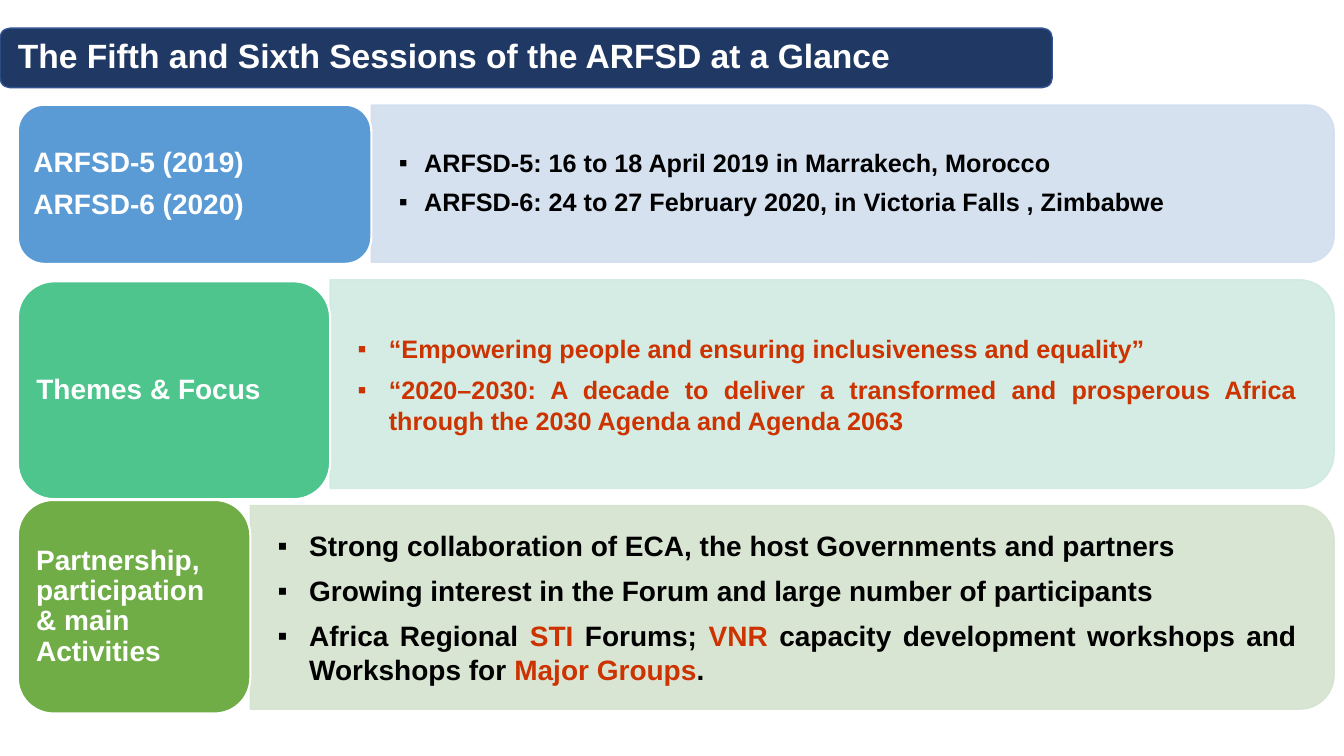
from dataclasses import dataclass

from lxml import etree
from pptx import Presentation
from pptx.dml import color
from pptx.enum import shapes, text
from pptx.oxml import ns
from pptx.util import Cm, Pt

COLORS = {
    "navy": "203864", "navy_line": "325491", "white": "FFFFFF",
    "black": "000000", "red": "CC3300",
    "blue": "5B9BD5", "pale_blue": "D2DEEF",
    "teal": "4DC58D", "pale_teal": "D0EAE1",
    "green": "70AD47", "pale_green": "D5E3CF",
}
LABEL_LEFT, PANEL_RIGHT = 0.45, 33.62
CORNER = 0.0488  # text inset per unit of height beside a rounded corner

TITLE_FRAME = dict(margin_left=Cm(0.38), margin_right=Cm(0.2), margin_top=Cm(0),
                   margin_bottom=Cm(0.13))
LABEL_FRAME = dict(margin_left=Cm(0.2), margin_right=Cm(0.2), margin_top=Cm(0.1),
                   margin_bottom=Cm(0.1))
PANEL_FRAME = dict(margin_left=Cm(0.69), margin_right=Cm(0.69), margin_top=Cm(0.36),
                   margin_bottom=Cm(0.36))
LABEL_PARAGRAPH = dict(alignment=text.PP_ALIGN.LEFT, line_spacing=0.9, space_after=Pt(8))


@dataclass
class Box:
    left: float
    top: float
    width: float
    height: float

    def lengths(self) -> list:
        return [Cm(v) for v in (self.left, self.top, self.width, self.height)]


@dataclass
class Run:
    words: str
    color: str = "black"


@dataclass
class Row:
    split: float  # where the label ends and the panel starts
    label_top: float
    label_height: float
    label_color: str
    labels: list[str]
    panel_top: float
    panel_height: float
    panel_color: str
    bullets: list[list[Run]]
    size: int
    indent: float = 0.79
    line_spacing: float = 1.0


ROWS = [
    Row(9.36, 2.64, 4.01, "blue", ["ARFSD-5 (2019)", "ARFSD-6 (2020)"],
        2.65, 3.96, "pale_blue",
        [[Run("ARFSD-5: 16 to 18 April 2019 in Marrakech, Morocco")],
         [Run("ARFSD-6: 24 to 27 February 2020, in Victoria Falls , Zimbabwe")]],
        size=18, indent=0.64, line_spacing=0.9),
    Row(8.32, 7.09, 5.49, "teal", ["Themes & Focus"],
        7.05, 5.26, "pale_teal",
        [[Run("“Empowering people and ensuring inclusiveness and equality”", "red")],
         [Run("“2020–2030: A decade to deliver a transformed and prosperous Africa "
              "through the 2030 Agenda and Agenda 2063", "red")]],
        size=18),
    Row(6.31, 12.6, 5.38, "green", ["Partnership, participation & main Activities"],
        12.74, 5.13, "pale_green",
        [[Run("Strong collaboration of ECA, the host Governments and partners")],
         [Run("Growing interest in the Forum and large number of participants")],
         [Run("Africa Regional "), Run("STI", "red"), Run(" Forums; "), Run("VNR", "red"),
          Run(" capacity development workshops and Workshops for "),
          Run("Major Groups", "red"), Run(".")]],
        size=20),
]


def rgb(name: str) -> color.RGBColor:
    return color.RGBColor.from_string(COLORS[name])


def apply(target, values: dict) -> None:
    for name, value in values.items():
        setattr(target, name, value)


def add_block(slide, kind, box: Box, fill: str, line: str, width: float):
    sp = slide.shapes.add_shape(kind, *box.lengths())
    sp.shadow.inherit = False
    sp.fill.solid()
    sp.fill.fore_color.rgb = rgb(fill)
    sp.line.color.rgb = rgb(line)
    sp.line.width = Pt(width)
    return sp


def write(sp, paragraphs: list[list[Run]], size: int, frame: dict, layout: dict,
          indent: float = 0) -> None:
    tf = sp.text_frame
    apply(tf, dict(word_wrap=True, vertical_anchor=text.MSO_ANCHOR.MIDDLE, **frame))
    for i, runs in enumerate(paragraphs):
        p = tf.add_paragraph() if i else tf.paragraphs[0]
        apply(p, layout)
        if indent:
            add_bullet(p, indent)
        for run in runs:
            r = p.add_run()
            r.text = run.words
            apply(r.font, dict(name="Arial", size=Pt(size), bold=True))
            r.font.color.rgb = rgb(run.color)


def add_bullet(p, indent: float) -> None:
    pPr = p._p.get_or_add_pPr()
    pPr.set("marL", str(Cm(indent)))
    pPr.set("indent", str(-Cm(indent)))
    etree.SubElement(pPr, ns.qn("a:buFont")).set("typeface", "Arial")
    etree.SubElement(pPr, ns.qn("a:buChar")).set("char", "▪")


def add_panel(slide, row: Row) -> None:
    width, height = PANEL_RIGHT - row.split, row.panel_height
    # The shape is turned a quarter, so its sides swap around the same centre
    shift = (width - height) / 2
    turned = Box(row.split + shift, row.panel_top - shift, height, width)
    sp = add_block(slide, shapes.MSO_SHAPE.ROUND_2_SAME_RECTANGLE, turned,
                   row.panel_color, row.panel_color, 1)
    sp.rotation = 90
    for clr in sp._element.spPr.iter(ns.qn("a:srgbClr")):
        etree.SubElement(clr, ns.qn("a:alpha")).set("val", "90000")

    inset = CORNER * height
    area = Box(row.split, row.panel_top + inset, width - inset, height - 2 * inset)
    write(slide.shapes.add_textbox(*area.lengths()), row.bullets, row.size, PANEL_FRAME,
          dict(alignment=text.PP_ALIGN.JUSTIFY, line_spacing=row.line_spacing,
               space_after=Pt(8)), row.indent)


def add_label(slide, row: Row) -> None:
    box = Box(LABEL_LEFT, row.label_top, row.split - LABEL_LEFT, row.label_height)
    sp = add_block(slide, shapes.MSO_SHAPE.ROUNDED_RECTANGLE, box,
                   row.label_color, "white", 1.5)
    write(sp, [[Run(label, "white")] for label in row.labels], 20, LABEL_FRAME,
          LABEL_PARAGRAPH)


def main() -> None:
    prs = Presentation()
    prs.slide_width, prs.slide_height = Cm(33.87), Cm(19.05)
    slide = prs.slides.add_slide(prs.slide_layouts[6])

    # Title bar
    title = add_block(slide, shapes.MSO_SHAPE.ROUNDED_RECTANGLE,
                      Box(0, 0.71, 26.52, 1.5), "navy", "navy_line", 1)
    write(title, [[Run("The Fifth and Sixth Sessions of the ARFSD at a Glance", "white")]],
          24, TITLE_FRAME, dict(alignment=text.PP_ALIGN.LEFT))

    # Rows: a panel of bullets behind its label
    for row in ROWS:
        add_panel(slide, row)
        add_label(slide, row)

    prs.save("out.pptx")


if __name__ == "__main__":
    main()
